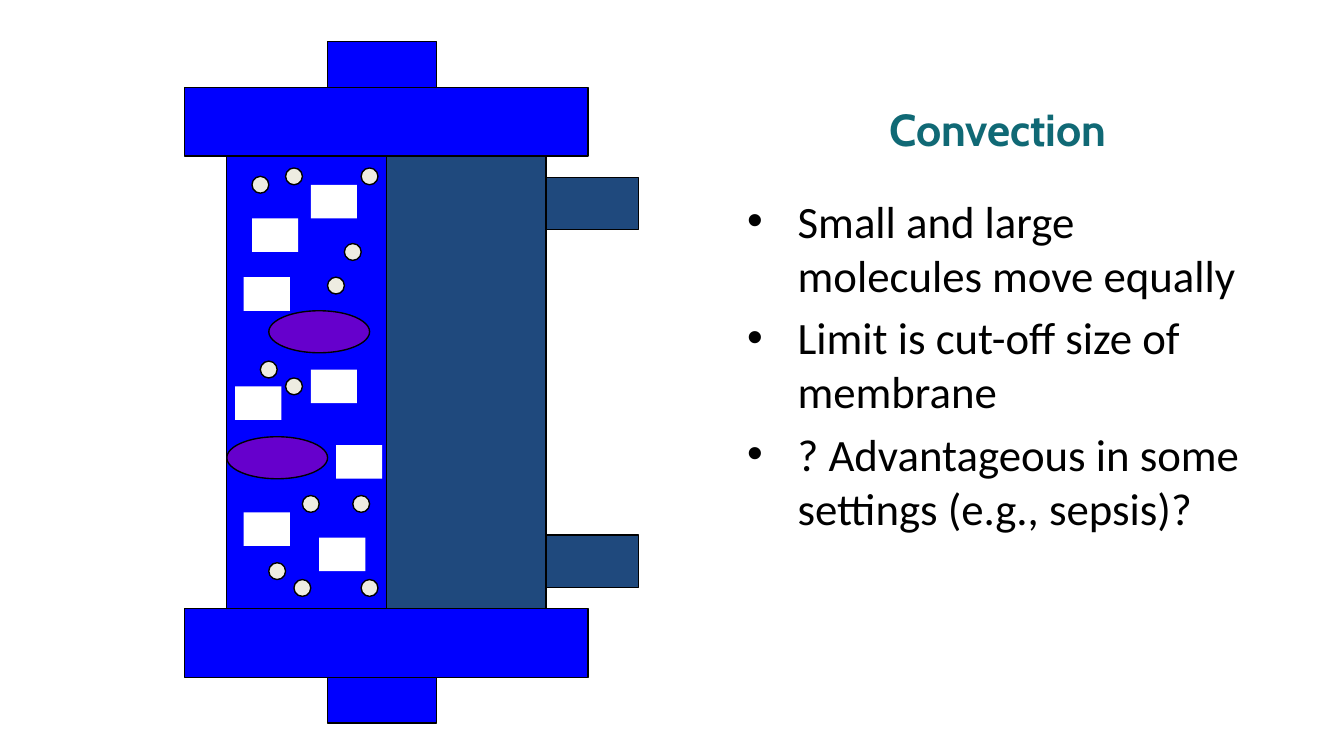
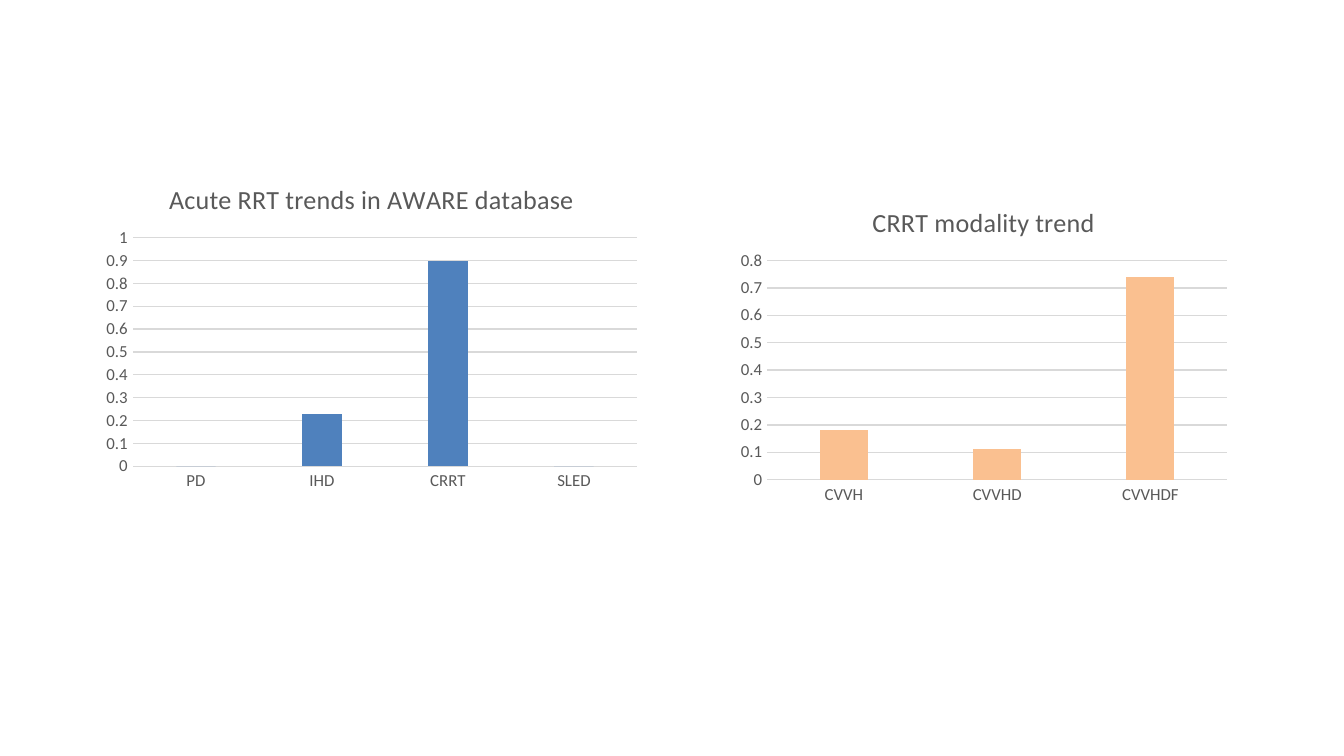
from dataclasses import dataclass

from lxml.etree import SubElement
from pptx import Presentation
from pptx.chart.data import CategoryChartData
from pptx.dml.color import RGBColor
from pptx.enum.chart import XL_CHART_TYPE, XL_TICK_MARK
from pptx.enum.shapes import MSO_SHAPE
from pptx.enum.text import MSO_ANCHOR, MSO_AUTO_SIZE, PP_ALIGN
from pptx.oxml.ns import qn
from pptx.util import Inches, Pt


@dataclass(frozen=True)
class Theme:
    heading_font: str = "Cabin"
    body_font: str = "Calibri"
    heading: str = "106975"
    text: str = "000000"
    outline: str = "000000"
    blood: str = "0000FF"
    filtrate: str = "1F497D"
    white: str = "FFFFFF"
    small: str = "EEECE1"
    cell: str = "6600CC"
    chart_text: str = "595959"
    grid: str = "D9D9D9"
    text_size: int = 24
    chart_title_size: int = 14
    axis_size: int = 9
    line_width: float = 0.75


T = Theme()

# Content
TITLE = "Convection"
BULLETS = [
    "Small and large molecules move equally",
    "Limit is cut-off size of membrane",
    "? Advantageous in some settings (e.g., sepsis)?",
]

# Molecules sit on a grid of 1/16 inch: (column, row)
UNIT = 1 / 16
MOLECULES = [
    # shape, size in grid units, fill, outlined, places
    (MSO_SHAPE.RECTANGLE, (5.5, 4), T.white, False,
     [(30, 26), (29, 33), (37, 44), (37, 22), (28, 46), (40, 53), (29, 61), (38, 64)]),
    (MSO_SHAPE.OVAL, (2, 2), T.small, True,
     [(41, 29), (31, 43), (30, 21), (42, 59), (36, 59), (39, 33),
      (43, 69), (32, 67), (34, 20), (34, 45), (35, 69), (43, 20)]),
    (MSO_SHAPE.OVAL, (12, 5), T.cell, True, [(32, 37), (27, 52)]),
]

# Filter parts: grid column, width in columns, top and height in inches, fill
CHAMBERS = [(27, 19, 1.15, 3.38, T.blood), (46, 19, 1.15, 3.38, T.filtrate)]
MIRRORED = [
    (65, 11, 1.32, 0.39, T.filtrate),  # side ports
    (22, 48, 0.65, 0.51, T.blood),     # caps
    (39, 13, 0.31, 0.34, T.blood),     # end ports
]
MIRROR_SPAN = 5.69  # top of a part plus bottom of its mirrored twin

CHARTS = [
    # title, box, axis maximum, colour, values
    ("Acute RRT trends in AWARE database", (0.71, 1.21, 4.11, 2.49), 1, "4F81BD",
     {"PD": 0, "IHD": 0.23, "CRRT": 0.9, "SLED": 0}),
    ("CRRT modality trend", (5.43, 1.38, 3.78, 2.42), 0.8, "FAC090",
     {"CVVH": 0.18, "CVVHD": 0.11, "CVVHDF": 0.74}),
]
PLOT_INSET = (0.28, 0.56, 0.08, 0.23)  # left, top, right, bottom in inches


def rgb(value):
    return RGBColor.from_string(value)


def set_font(font, name, size, color, bold=False):
    font.name, font.size, font.bold = name, Pt(size), bold
    font.color.rgb = rgb(color)


def place(sp, left, top, width, height):
    sp.left, sp.top = Inches(left), Inches(top)
    sp.width, sp.height = Inches(width), Inches(height)


def add_part(shapes, kind, box, fill, outlined=True):
    sp = shapes.add_shape(kind, *map(Inches, box))
    sp.shadow.inherit = False
    sp.fill.solid()
    sp.fill.fore_color.rgb = rgb(fill)
    if outlined:
        sp.line.color.rgb = rgb(T.outline)
        sp.line.width = Pt(T.line_width)
    else:
        sp.line.fill.background()


def fill_placeholder(sp, box, lines, font, color, bold=False, align=PP_ALIGN.LEFT):
    place(sp, *box)
    tf = sp.text_frame
    tf.word_wrap, tf.auto_size = True, MSO_AUTO_SIZE.NONE
    tf.vertical_anchor = MSO_ANCHOR.TOP
    tf.margin_left = tf.margin_top = tf.margin_bottom = 0
    tf.margin_right = Inches(0.1)
    tf.text = "\n".join(lines)
    for i, p in enumerate(tf.paragraphs):
        p.alignment = align
        p.space_before = Pt(0.2 * T.text_size if i else 0)
        set_font(p.font, font, T.text_size, color, bold)


def add_filter(slide):
    group = slide.shapes.add_group_shape()
    twins = [(x, w, MIRROR_SPAN - y - h, h, fill) for x, w, y, h, fill in MIRRORED]
    for x, w, y, h, fill in CHAMBERS + MIRRORED + twins:
        add_part(group.shapes, MSO_SHAPE.RECTANGLE, (x * UNIT, y, w * UNIT, h), fill)


def add_molecules(slide):
    for kind, size, fill, outlined, places in MOLECULES:
        for spot in places:
            box = [n * UNIT for n in (*spot, *size)]
            add_part(slide.shapes, kind, box, fill, outlined)


def set_plot_area(chart, width, height):
    left, top, right, bottom = PLOT_INSET
    area = chart._chartSpace.chart.plotArea
    for old in area.findall(qn("c:layout")):
        area.remove(old)
    layout = SubElement(area, qn("c:layout"))
    area.insert(0, layout)
    manual = SubElement(layout, qn("c:manualLayout"))
    for tag, val in [
        ("layoutTarget", "inner"), ("xMode", "edge"), ("yMode", "edge"),
        ("x", left / width), ("y", top / height),
        ("w", 1 - (left + right) / width), ("h", 1 - (top + bottom) / height),
    ]:
        SubElement(manual, qn(f"c:{tag}")).set("val", str(val))


def add_column_chart(slide, title, box, maximum, color, values):
    data = CategoryChartData()
    data.categories = list(values)
    data.add_series("Series 1", list(values.values()))
    chart = slide.shapes.add_chart(
        XL_CHART_TYPE.COLUMN_CLUSTERED, *map(Inches, box), data).chart
    set_font(chart.font, T.body_font, 10, T.text)
    chart.has_legend = False
    chart.has_title = True
    tf = chart.chart_title.text_frame
    tf.text = title
    set_font(tf.paragraphs[0].font, T.body_font, T.chart_title_size, T.chart_text)
    chart.chart_title.include_in_layout = False

    # Columns
    plot = chart.plots[0]
    plot.gap_width, plot.overlap, plot.vary_by_categories = 219, -27, False
    fill = plot.series[0].format.fill
    fill.solid()
    fill.fore_color.rgb = rgb(color)

    # Axes
    cat, val = chart.category_axis, chart.value_axis
    for axis in (cat, val):
        axis.major_tick_mark = axis.minor_tick_mark = XL_TICK_MARK.NONE
        set_font(axis.tick_labels.font, T.body_font, T.axis_size, T.chart_text)
    val.minimum_scale, val.maximum_scale, val.major_unit = 0, maximum, 0.1
    val.format.line.fill.background()
    val.has_major_gridlines = True
    for line in (cat.format.line, val.major_gridlines.format.line):
        line.color.rgb = rgb(T.grid)
        line.width = Pt(T.line_width)
    set_plot_area(chart, *box[2:])


def main():
    prs = Presentation()
    prs.slide_width = Inches(10)
    prs.slide_height = prs.slide_width * 9 // 16

    # Convection through the filter
    slide = prs.slides.add_slide(prs.slide_layouts[1])
    fill_placeholder(slide.shapes.title, (5.56, 0.76, 3.83, 0.28), [TITLE],
                     T.heading_font, T.heading, True, PP_ALIGN.CENTER)
    fill_placeholder(slide.placeholders[1], (5.56, 1.44, 3.83, 3.29), BULLETS,
                     T.body_font, T.text)
    add_filter(slide)
    add_molecules(slide)

    # Therapy trends
    slide = prs.slides.add_slide(prs.slide_layouts[6])
    for spec in CHARTS:
        add_column_chart(slide, *spec)

    prs.save("out.pptx")


if __name__ == "__main__":
    main()
